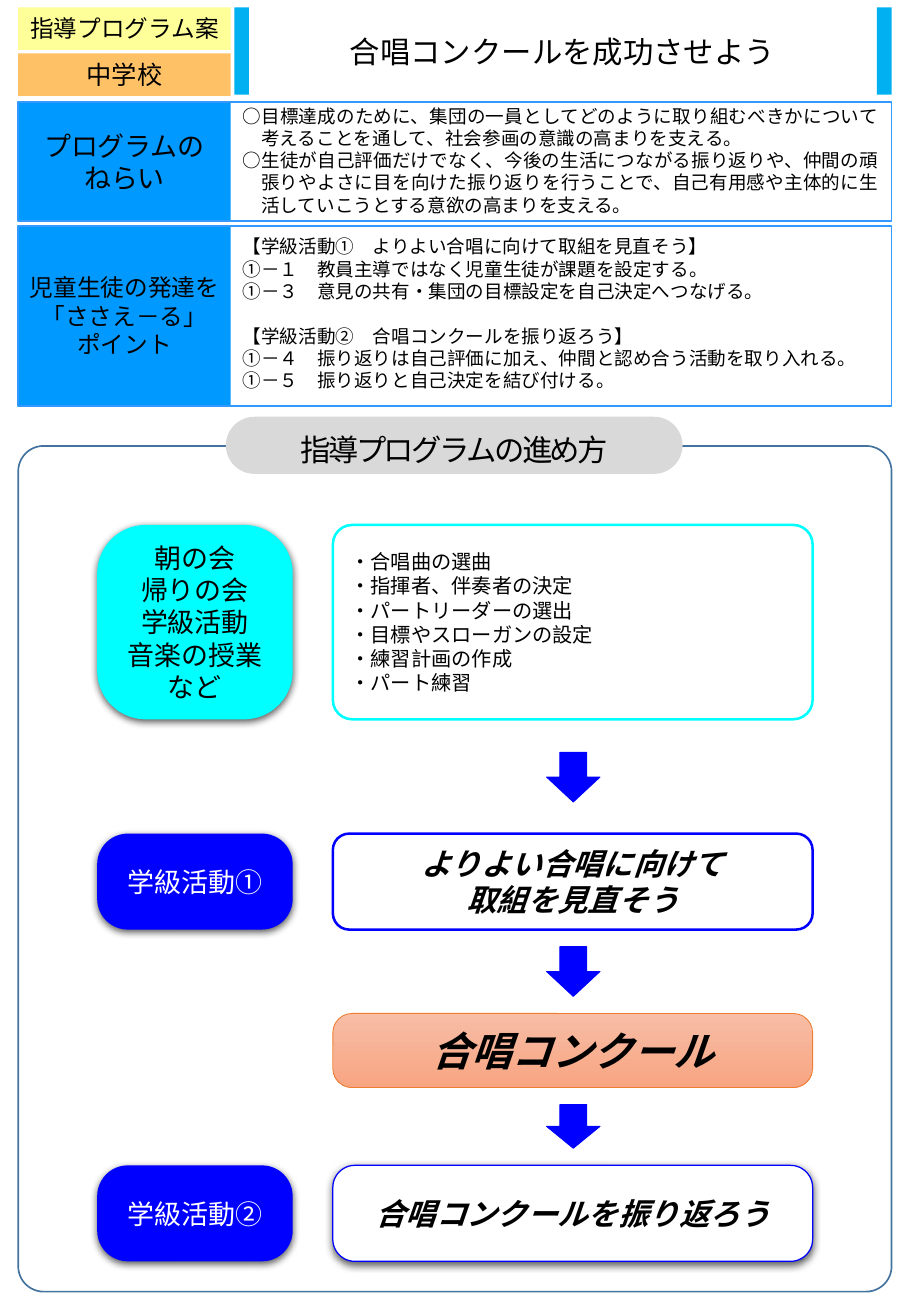
from lxml import etree
from pptx import Presentation
from pptx.dml.color import RGBColor
from pptx.enum.shapes import MSO_SHAPE
from pptx.enum.text import MSO_ANCHOR, PP_ALIGN
from pptx.oxml.ns import qn
from pptx.util import Emu, Pt

RECT, ROUND = MSO_SHAPE.RECTANGLE, MSO_SHAPE.ROUNDED_RECTANGLE
ARROW = MSO_SHAPE.DOWN_ARROW
LEFT, CENTER, JUSTIFY = PP_ALIGN.LEFT, PP_ALIGN.CENTER, PP_ALIGN.JUSTIFY
TOP, MIDDLE = MSO_ANCHOR.TOP, MSO_ANCHOR.MIDDLE
JP, LATIN = "Noto Sans CJK JP", "Calibri"
BLACK, WHITE, BLUE, CYAN = "000000", "FFFFFF", "0000FF", "00FFFF"
LABEL_BLUE, FRAME_BLUE, BAR_BLUE = "0099FF", "3399FF", "00B0F0"
EMU_PER_PX = 9144

AIMS = [
    "○目標達成のために、集団の一員としてどのように取り組むべきかについて"
    "考えることを通して、社会参画の意識の高まりを支える。",
    "○生徒が自己評価だけでなく、今後の生活につながる振り返りや、仲間の頑"
    "張りやよさに目を向けた振り返りを行うことで、自己有用感や主体的に生"
    "活していこうとする意欲の高まりを支える。",
]
POINTS = [
    "【学級活動①　よりよい合唱に向けて取組を見直そう】",
    "①－１　教員主導ではなく児童生徒が課題を設定する。",
    "①－３　意見の共有・集団の目標設定を自己決定へつなげる。",
    "【学級活動②　合唱コンクールを振り返ろう】",
    "①－４　振り返りは自己評価に加え、仲間と認め合う活動を取り入れる。",
    "①－５　振り返りと自己決定を結び付ける。",
]
PREPARATION = [
    "・合唱曲の選曲",
    "・指揮者、伴奏者の決定",
    "・パートリーダーの選出",
    "・目標やスローガンの設定",
    "・練習計画の作成",
    "・パート練習",
]


def px(n):
    """Turn px into EMU."""
    return Emu(n * EMU_PER_PX)


def rgb(color):
    """Turn a hex string into a colour."""
    return RGBColor.from_string(color)


def write(shape, lines, size, color=BLACK, font=JP, align=CENTER, anchor=MIDDLE,
          strong=False, wrap=True, leading=1.2):
    """Write one paragraph per line and return the paragraphs."""
    tf = shape.text_frame
    tf.word_wrap, tf.vertical_anchor = wrap, anchor
    tf.text = "\n".join(lines)
    for p in tf.paragraphs:
        p.alignment = align
        p.line_spacing = Pt(round(size * leading, 1))
        p.font.size, p.font.name = Pt(size), font
        p.font.bold = p.font.italic = strong
        p.font.color.rgb = rgb(color)
        defaults = p._p.pPr.find(qn("a:defRPr"))
        etree.SubElement(defaults, qn("a:ea"), typeface=JP)
    return tf.paragraphs


def textbox(s, box, lines, size, **style):
    """Add a text box."""
    tb = s.shapes.add_textbox(*map(px, box))
    return tb, write(tb, lines, size, **style)


def block(s, kind, box, fill=None, line=None, width=1, radius=None):
    """Add a preset shape with an optional fill, outline and corner radius."""
    sp = s.shapes.add_shape(kind, *map(px, box))
    sp.shadow.inherit = False
    if radius is not None:
        sp.adjustments[0] = radius
    if fill:
        sp.fill.solid()
        sp.fill.fore_color.rgb = rgb(fill)
    else:
        sp.fill.background()
    if line:
        sp.line.color.rgb = rgb(line)
        sp.line.width = Pt(width)
    else:
        sp.line.fill.background()
    return sp


def cast_shadow(sp):
    """Give a shape a soft shadow below it."""
    effects = sp._element.spPr.find(qn("a:effectLst"))
    shadow = etree.SubElement(effects, qn("a:outerShdw"), blurRad="57150",
                              dist="19050", dir="5400000", algn="ctr", rotWithShape="0")
    color = etree.SubElement(shadow, qn("a:srgbClr"), val=BLACK)
    etree.SubElement(color, qn("a:alpha"), val="63000")


def label(s, box, lines, size, fill):
    """Add a flat label and return it."""
    sp = block(s, RECT, box, fill)
    write(sp, lines, size, font=LATIN, wrap=False)
    return sp


def stage(s, top, height, lines, fill, color, radius):
    """Add a shadowed stage button in the left column."""
    sp = block(s, ROUND, (80, top, 161, height), fill, radius=radius)
    cast_shadow(sp)
    write(sp, lines, 16, color=color, wrap=False)


def step(s, top, height, lines, size, line, width, radius, **style):
    """Add a step card in the right column and return it."""
    sp = block(s, ROUND, (274, top, 395, height), WHITE, line, width, radius)
    write(sp, lines, size, **style)
    return sp


def header(s):
    """Add the title row."""
    label(s, (15, 6, 175, 35), ["指導プログラム案"], 14, "FFFF99")
    school = label(s, (15, 44, 175, 35), ["中学校"], 15, "FF9900")
    color = school._element.spPr.find(qn("a:solidFill"))[0]
    etree.SubElement(color, qn("a:alpha"), val="60000")
    for left in (193, 722):
        block(s, RECT, (left, 6, 12, 72), BAR_BLUE)
    textbox(s, (204, 6, 518, 72), ["合唱コンクールを成功させよう"], 18)


def overview(s):
    """Add the aims row and the support points row."""
    label(s, (15, 84, 175, 98), ["プログラムの", "ねらい"], 16, LABEL_BLUE)
    label(s, (15, 186, 175, 148),
          ["児童生徒の発達を", "「ささえ－る」", "ポイント"], 14, LABEL_BLUE)
    for top, height in ((84, 98), (186, 148)):
        block(s, RECT, (15, top, 719, height), line=FRAME_BLUE)
    tb, aims = textbox(s, (190, 84, 543, 97), AIMS, 11, align=JUSTIFY, anchor=TOP)
    tb.text_frame.margin_top, tb.text_frame.margin_bottom = px(2), px(4)
    for p in aims:
        p._p.pPr.set("marL", str(Pt(11)))
        p._p.pPr.set("indent", str(-Pt(11)))
    points = textbox(s, (190, 186, 542, 144), POINTS, 11, align=LEFT)[1]
    points[3].space_before = Pt(13.2)


def procedure(s):
    """Add the framed flow of stages and steps."""
    block(s, ROUND, (15, 367, 719, 696), line="43739E", radius=0.03)
    heading = block(s, ROUND, (186, 343, 376, 47), "D9D9D9", radius=0.5)
    for p in write(heading, ["指導プログラムの進め方"], 18, leading=1.44):
        p._p.pPr.find(qn("a:defRPr")).set("spc", "-150")

    stage(s, 432, 160, ["朝の会", "帰りの会", "学級活動", "音楽の授業", "など"],
          CYAN, BLACK, 0.25)
    stage(s, 686, 79, ["学級活動①"], BLUE, WHITE, 0.32)
    stage(s, 959, 79, ["学級活動②"], BLUE, WHITE, 0.32)

    step(s, 432, 160, PREPARATION, 12, CYAN, 1.5, 0.1, align=LEFT)
    step(s, 686, 79, ["よりよい合唱に向けて", "取組を見直そう"], 18, BLUE, 1.5, 0.17,
         strong=True)
    contest = step(s, 834, 61, ["合唱コンクール"], 24, "ED7D31", 0.5, 0.26, strong=True)
    contest.fill.gradient()
    contest.fill.gradient_angle = 270
    for stop, color in zip(contest.fill.gradient_stops, ("F7BDA5", "F8A582")):
        stop.color.rgb = rgb(color)
    review = step(s, 959, 79, ["合唱コンクールを振り返ろう"], 18, BLUE, 0.75, 0.23,
                  strong=True, wrap=False)
    cast_shadow(review)

    for top, height in ((619, 41), (779, 41), (909, 36)):
        block(s, ARROW, (450, top, 44, height), BLUE, BLUE, 0.5)


def main():
    """Build the slide and save it."""
    prs = Presentation()
    prs.slide_width, prs.slide_height = px(750), px(1083)
    s = prs.slides.add_slide(prs.slide_layouts[6])
    header(s)
    overview(s)
    procedure(s)
    prs.save("out.pptx")


if __name__ == "__main__":
    main()
